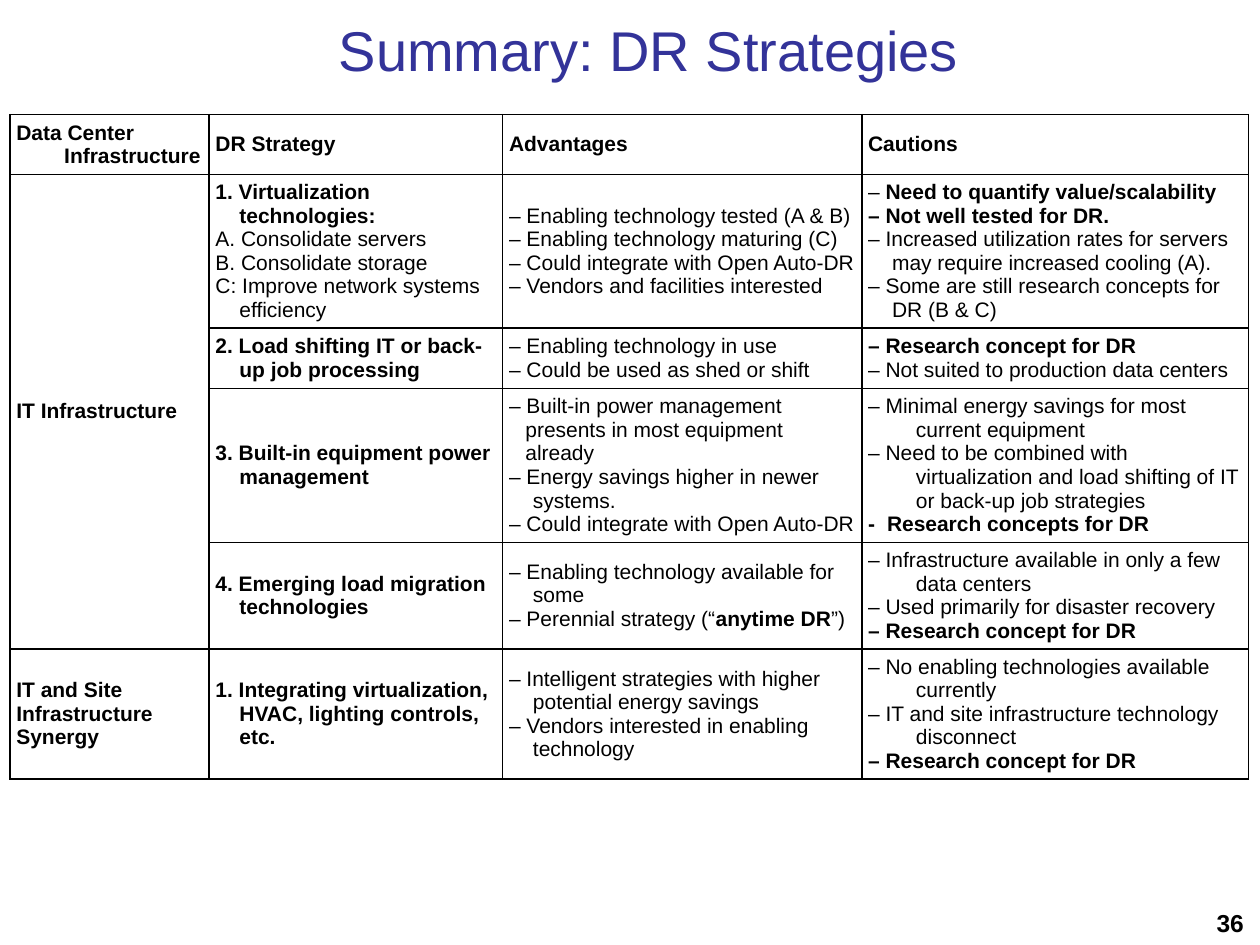
from lxml.etree import SubElement
from pptx import Presentation
from pptx.dml.color import RGBColor
from pptx.enum.text import MSO_ANCHOR, PP_ALIGN
from pptx.oxml.ns import qn
from pptx.util import Inches, Pt

BLACK = RGBColor(0, 0, 0)
TITLE_BLUE = RGBColor(0x33, 0x33, 0x99)
FONT = "Arial"
WIDE, MID, DASH, SLIM = 0.38, 0.19, 0.15, 0.13  # hanging indents in inches

COL_WIDTHS = [1.58, 2.33, 2.85, 3.07]
ROW_HEIGHTS = [0.47, 1.22, 0.48, 1.22, 0.84, 1.03]

# Each cell is a list of (hanging indent, text); ** switches bold on and off.
ROWS = [
    [[(WIDE, "**Data Center Infrastructure")],
     [(WIDE, "**DR Strategy")],
     [(WIDE, "**Advantages")],
     [(WIDE, "**Cautions")]],
    [[(WIDE, "**IT Infrastructure")],
     [(MID, "**1. Virtualization technologies:"),
      (WIDE, "A. Consolidate servers"),
      (WIDE, "B. Consolidate storage"),
      (MID, "C: Improve network systems efficiency")],
     [(WIDE, "– Enabling technology tested (A & B)"),
      (WIDE, "– Enabling technology maturing (C)"),
      (WIDE, "– Could integrate with Open Auto-DR"),
      (WIDE, "– Vendors and facilities interested")],
     [(MID, "– **Need to quantify value/scalability"),
      (MID, "**– Not well tested for DR."),
      (MID, "– Increased utilization rates for servers may require increased cooling (A)."),
      (MID, "– Some are still research concepts for DR (B & C)")]],
    [[],
     [(MID, "**2. Load shifting IT or back-up job processing")],
     [(WIDE, "– Enabling technology in use"),
      (WIDE, "– Could be used as shed or shift")],
     [(WIDE, "**– Research concept for DR"),
      (WIDE, "– Not suited to production data centers")]],
    [[],
     [(MID, "**3. Built-in equipment power management")],
     [(SLIM, "– Built-in power management presents in most equipment already"),
      (MID, "– Energy savings higher in newer systems."),
      (MID, "– Could integrate with Open Auto-DR")],
     [(WIDE, "– Minimal energy savings for most current equipment"),
      (WIDE, "– Need to be combined with virtualization and load shifting of IT "
             "or back-up job strategies"),
      (DASH, "**-\tResearch concepts for DR")]],
    [[],
     [(MID, "**4. Emerging load migration technologies")],
     [(MID, "– Enabling technology available for some"),
      (MID, "– Perennial strategy (“**anytime DR**”)")],
     [(WIDE, "– Infrastructure available in only a few data centers"),
      (WIDE, "– Used primarily for disaster recovery"),
      (WIDE, "**– Research concept for DR")]],
    [[(0, "**IT and Site Infrastructure Synergy")],
     [(MID, "**1. Integrating virtualization, HVAC, lighting controls, etc.")],
     [(MID, "– Intelligent strategies with higher potential energy savings"),
      (MID, "– Vendors interested in enabling technology")],
     [(WIDE, "– No enabling technologies available currently"),
      (WIDE, "– IT and site infrastructure technology disconnect"),
      (WIDE, "**– Research concept for DR")]],
]


def fill_cell(cell, paragraphs):
    tf = cell.text_frame
    for i, (indent, text) in enumerate(paragraphs):
        p = tf.add_paragraph() if i else tf.paragraphs[0]
        pPr = p._p.get_or_add_pPr()
        pPr.set("marL", str(Inches(indent)))
        pPr.set("indent", str(-Inches(indent)))
        p.font.name, p.font.size = FONT, Pt(12)
        p.font.color.rgb = BLACK
        for j, part in enumerate(text.split("**")):
            if part:
                r = p.add_run()
                r.text = part
                r.font.bold = j % 2 == 1


def format_cell(cell):
    """Set thin black borders, small margins and no fill."""
    tcPr = cell._tc.get_or_add_tcPr()
    for side in ("a:lnL", "a:lnR", "a:lnT", "a:lnB"):
        ln = SubElement(tcPr, qn(side), w=str(Pt(1)))
        SubElement(SubElement(ln, qn("a:solidFill")), qn("a:srgbClr"), val=str(BLACK))
    cell.fill.background()
    cell.vertical_anchor = MSO_ANCHOR.MIDDLE
    cell.margin_left = cell.margin_right = Inches(0.05)
    cell.margin_top = cell.margin_bottom = Inches(0.05)


prs = Presentation()
prs.slide_width, prs.slide_height = Inches(10), Inches(7.5)
s = prs.slides.add_slide(prs.slide_layouts[5])

# Title
title = s.shapes.title
title.left, title.top = Inches(0.65), Inches(0)
title.width, title.height = Inches(9), Inches(0.78)
tf = title.text_frame
tf.text = "Summary: DR Strategies"
tf.vertical_anchor = MSO_ANCHOR.MIDDLE
p = tf.paragraphs[0]
p.alignment = PP_ALIGN.CENTER
p.font.name, p.font.size = FONT, Pt(32)
p.font.color.rgb = TITLE_BLUE

# Strategy table
table = s.shapes.add_table(
    len(ROWS), len(COL_WIDTHS), Inches(0.08), Inches(0.91),
    Inches(sum(COL_WIDTHS)), Inches(sum(ROW_HEIGHTS))).table
table.first_row = table.horz_banding = False
for col, width in zip(table.columns, COL_WIDTHS):
    col.width = Inches(width)
for row, height, contents in zip(table.rows, ROW_HEIGHTS, ROWS):
    row.height = Inches(height)
    for cell, paragraphs in zip(row.cells, contents):
        format_cell(cell)
        fill_cell(cell, paragraphs)
table.cell(1, 0).merge(table.cell(4, 0))

# Page number
sp = s.shapes.add_textbox(Inches(9.08), Inches(6.94), Inches(0.89), Inches(0.36))
tf = sp.text_frame
tf.word_wrap = True
tf.margin_top, tf.margin_bottom = Inches(0.3), Inches(0)
p = tf.paragraphs[0]
p.text = "36"
p.alignment = PP_ALIGN.RIGHT
p.font.name, p.font.size, p.font.bold = FONT, Pt(14), True
p.font.color.rgb = BLACK

prs.save("out.pptx")
